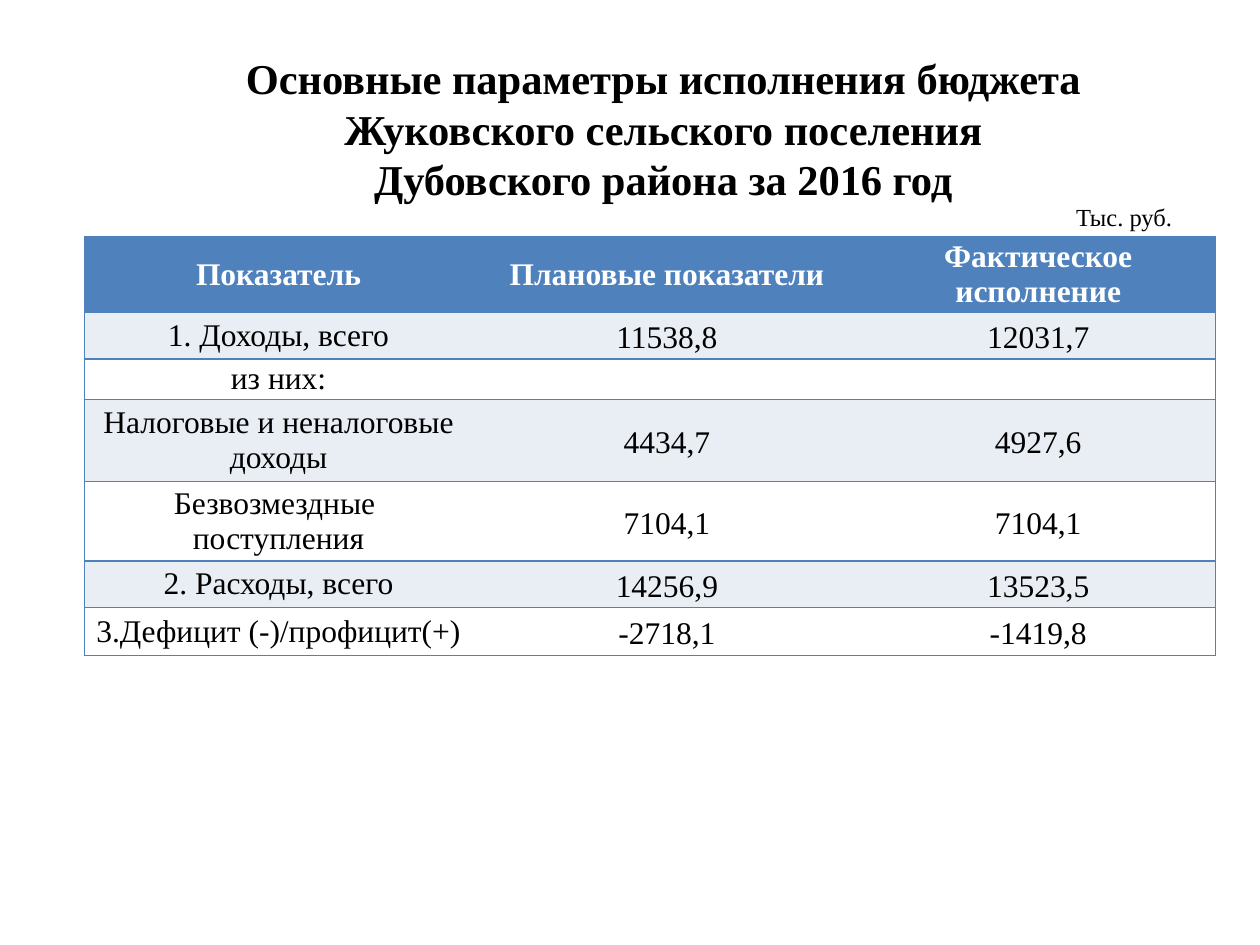
from lxml import etree
from pptx import Presentation
from pptx.dml.color import RGBColor
from pptx.enum.text import MSO_ANCHOR, PP_ALIGN
from pptx.oxml.ns import qn
from pptx.util import Cm, Pt

CENTER, RIGHT = PP_ALIGN.CENTER, PP_ALIGN.RIGHT
MIDDLE = MSO_ANCHOR.MIDDLE

TITLE = [
    "Основные параметры исполнения бюджета",
    "Жуковского сельского поселения",
    "Дубовского района за 2016 год",
]
ROWS = [
    ("Показатель", "Плановые показатели", "Фактическое исполнение"),
    ("1. Доходы, всего", "11538,8", "12031,7"),
    ("из них:", "", ""),
    ("Налоговые и неналоговые доходы", "4434,7", "4927,6"),
    ("Безвозмездные \nпоступления", "7104,1", "7104,1"),
    ("2. Расходы, всего", "14256,9", "13523,5"),
    ("3.Дефицит (-)/профицит(+)", "-2718,1", "-1419,8"),
]
COLUMN_WIDTHS = [7.83, 7.83, 7.14]
ROW_HEIGHTS = [1.5, 0.94, 0.82, 1.65, 1.6, 0.94, 0.97]


def color(value):
    return RGBColor.from_string(value)


class BudgetPage:
    font = "Times New Roman"
    ink, accent, band, paper = "000000", "4F81BD", "E9EDF4", "FFFFFF"

    def __init__(self, deck):
        self.page = deck.slides.add_slide(deck.slide_layouts[6])

    def set_text(self, frame, text, size, align, ink=ink, bold=False, spacing=None):
        frame.text = text
        for para in frame.paragraphs:
            para.alignment = align
            if spacing:
                para.line_spacing = spacing
            for span in para.runs:
                span.font.name = self.font
                span.font.size = Pt(size)
                span.font.bold = bold
                span.font.color.rgb = color(ink)

    def text(self, left, top, width, height, text, size, align, **style):
        box = self.page.shapes.add_textbox(Cm(left), Cm(top), Cm(width), Cm(height))
        frame = box.text_frame
        frame.word_wrap = True
        frame.margin_top = frame.margin_bottom = 0
        self.set_text(frame, text, size, align, **style)

    def borders(self, cell, sides):
        """Draw the named sides and leave the others without a line."""
        properties = cell._tc.get_or_add_tcPr()
        for index, side in enumerate("LRTB"):
            line = etree.Element(qn(f"a:ln{side}"), w=str(Pt(1)))
            if side in sides:
                fill = etree.SubElement(line, qn("a:solidFill"))
                etree.SubElement(fill, qn("a:srgbClr"), val=self.accent)
            else:
                etree.SubElement(line, qn("a:noFill"))
            properties.insert(index, line)

    def table(self, left, top, widths, heights, rows):
        frame = self.page.shapes.add_table(
            len(rows), len(widths), Cm(left), Cm(top), Cm(sum(widths)), Cm(sum(heights))
        )
        table = frame.table
        for column, width in zip(table.columns, widths):
            column.width = Cm(width)
        for row, height in zip(table.rows, heights):
            row.height = Cm(height)

        last = len(widths) - 1
        for row_index, values in enumerate(rows):
            header = row_index == 0
            fill = self.accent if header else (self.paper, self.band)[row_index % 2]
            for column_index, value in enumerate(values):
                cell = table.cell(row_index, column_index)
                cell.margin_left = cell.margin_right = 0
                cell.margin_top = cell.margin_bottom = 0
                cell.vertical_anchor = MIDDLE
                cell.fill.solid()
                cell.fill.fore_color.rgb = color(fill)
                is_number = not header and column_index > 0
                self.set_text(
                    cell.text_frame, value, 18, CENTER,
                    ink=self.paper if header else self.ink,
                    bold=header,
                    spacing=1.15 if is_number and value else None,
                )
                self.borders(cell, "TB" + {0: "L", last: "R"}.get(column_index, ""))


def main():
    deck = Presentation()
    deck.slide_width, deck.slide_height = Cm(25.4), Cm(19.05)
    page = BudgetPage(deck)

    # Title, one paragraph with line breaks
    page.text(1.45, 1.05, 23.85, 3.1, "\v".join(TITLE), 24.3, CENTER,
              bold=True, spacing=Pt(29))

    # Budget figures
    page.table(1.7, 4.77, COLUMN_WIDTHS, ROW_HEIGHTS, ROWS)

    # Unit of measure
    page.text(18.29, 4.07, 5.59, 0.6, "Тыс. руб.", 14, RIGHT)

    deck.save("out.pptx")


if __name__ == "__main__":
    main()
